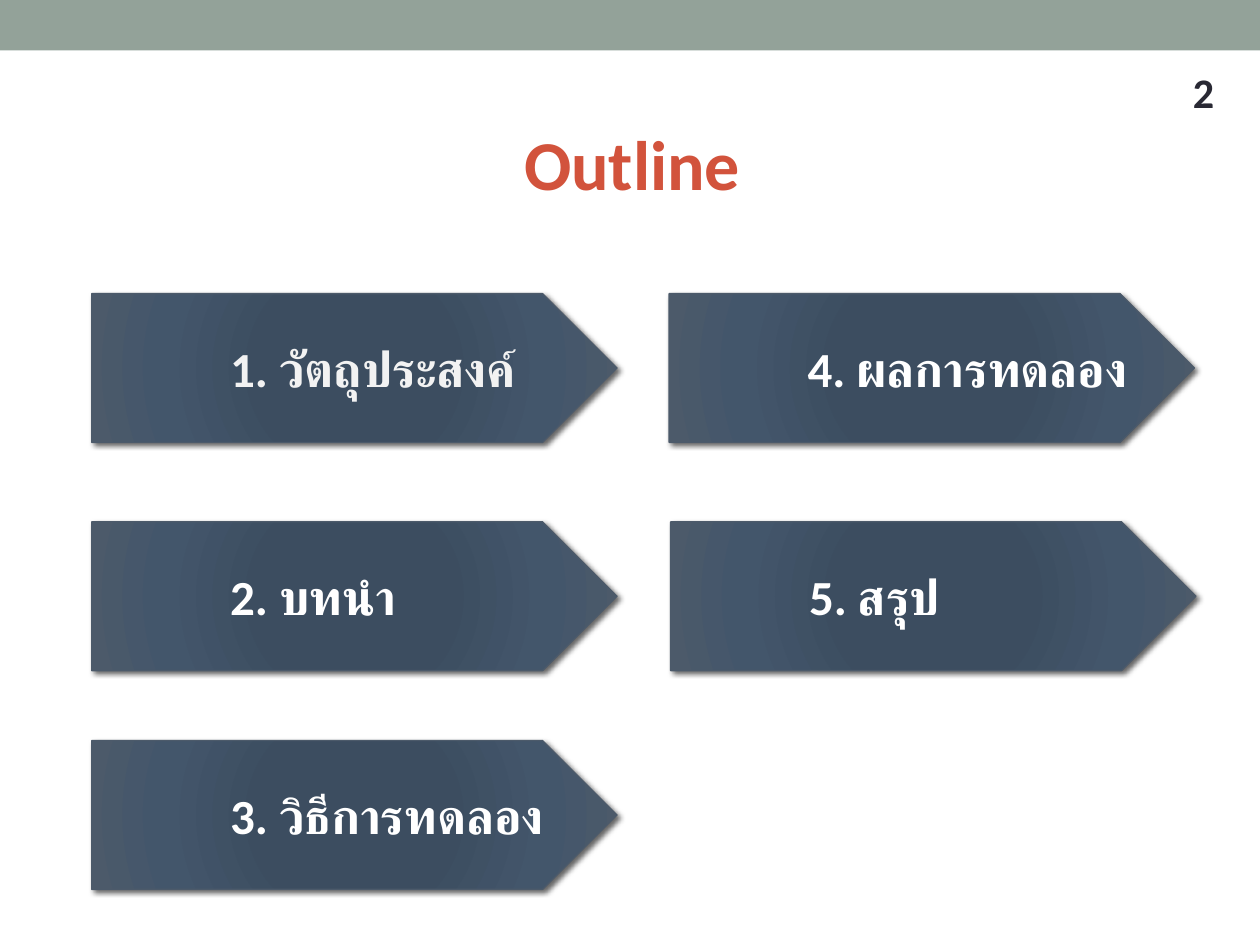
"""Build the outline slide with five arrow-shaped section markers."""
import dataclasses

import pptx
import pptx.dml.color
import pptx.enum.shapes
import pptx.enum.text
import pptx.oxml
import pptx.oxml.ns
import pptx.slide
import pptx.util
from pptx.util import Cm

NAMESPACE = pptx.oxml.ns.nsdecls("a")


def colour(value):
    return pptx.dml.color.RGBColor.from_string(value)


@dataclasses.dataclass
class SlideBuilder:
    page: pptx.slide.Slide
    font: str = "Calibri"
    band_fill: str = "93A299"
    edge: str = "4C5A6A"
    stops: tuple = ((0, "3B4D61"), (34, "3C4D60"), (70, "43566B"), (100, "4C5A6A"))

    def set_text(self, shape, text, size, ink):
        frame = shape.text_frame
        frame.text = text
        para = frame.paragraphs[0]
        para.alignment = pptx.enum.text.PP_ALIGN.LEFT
        para.font.name = self.font
        para.font.size = pptx.util.Pt(size)
        para.font.bold = True
        para.font.color.rgb = colour(ink)
        return para

    def band(self, width, height):
        band = self.page.shapes.add_shape(
            pptx.enum.shapes.MSO_SHAPE.RECTANGLE, 0, 0, width, height)
        band.shadow.inherit = False
        band.fill.solid()
        band.fill.fore_color.rgb = colour(self.band_fill)
        band.line.fill.background()

    def title(self, text, left, top, width, height):
        title = self.page.shapes.title
        title.left, title.top, title.width, title.height = left, top, width, height
        self.set_text(title, text, 40, "D2533C")

    def label(self, text, left, top, width, height):
        box = self.page.shapes.add_textbox(left, top, width, height)
        box.text_frame.word_wrap = True
        self.set_text(box, text, 24, "292934")

    def arrow(self, text, left, top, ink):
        arrow = self.page.shapes.add_shape(
            pptx.enum.shapes.MSO_SHAPE.PENTAGON, left, top, Cm(10.59), Cm(3))
        self.shade(arrow)
        arrow.line.color.rgb = colour(self.edge)
        arrow.line.width = pptx.util.Pt(0.75)
        arrow.text_frame.vertical_anchor = pptx.enum.text.MSO_ANCHOR.MIDDLE
        para = self.set_text(arrow, "\t" + text, 28, ink)
        tabs = pptx.oxml.parse_xml(
            f'<a:tabLst {NAMESPACE}><a:tab pos="{Cm(2.54)}" algn="l"/></a:tabLst>')
        para.font._element.addprevious(tabs)

    def shade(self, shape):
        stops = "".join(
            f'<a:gs pos="{place * 1000}"><a:srgbClr val="{value}"/></a:gs>'
            for place, value in self.stops)
        gradient = pptx.oxml.parse_xml(
            f'<a:gradFill {NAMESPACE} rotWithShape="1"><a:gsLst>{stops}</a:gsLst>'
            '<a:path path="circle"><a:fillToRect l="100000" t="100000" '
            'r="100000" b="100000"/></a:path></a:gradFill>')
        properties = shape._element.spPr
        properties.find(pptx.oxml.ns.qn("a:prstGeom")).addnext(gradient)
        shape.shadow.inherit = False
        shadow = pptx.oxml.parse_xml(
            f'<a:outerShdw {NAMESPACE} blurRad="{pptx.util.Pt(3)}" '
            f'dist="{pptx.util.Pt(2)}" dir="2700000" algn="br" rotWithShape="0">'
            '<a:srgbClr val="000000"><a:alpha val="60000"/></a:srgbClr></a:outerShdw>')
        properties.find(pptx.oxml.ns.qn("a:effectLst")).append(shadow)


def main():
    deck = pptx.Presentation()
    deck.slide_width, deck.slide_height = Cm(25.4), Cm(19.05)
    builder = SlideBuilder(deck.slides.add_slide(deck.slide_layouts[5]))
    builder.band(deck.slide_width, Cm(1.02))
    sections = (
        ("1. วัตถุประสงค์", 1.85, 5.92, "F2F2F2"),
        ("2. บทนำ", 1.85, 10.52, "FFFFFF"),
        ("3. วิธีการทดลอง", 1.85, 14.93, "FFFFFF"),
        ("4. ผลการทดลอง", 13.49, 5.92, "FFFFFF"),
        ("5. สรุป", 13.52, 10.52, "FFFFFF"),
    )
    for text, left, top, ink in sections:
        builder.arrow(text, Cm(left), Cm(top), ink)
    builder.label("2", Cm(23.8), Cm(1.22), Cm(1.4), Cm(1.27))
    builder.title("Outline", Cm(10.31), Cm(2.29), Cm(5.79), Cm(1.96))
    deck.save("out.pptx")


if __name__ == "__main__":
    main()
